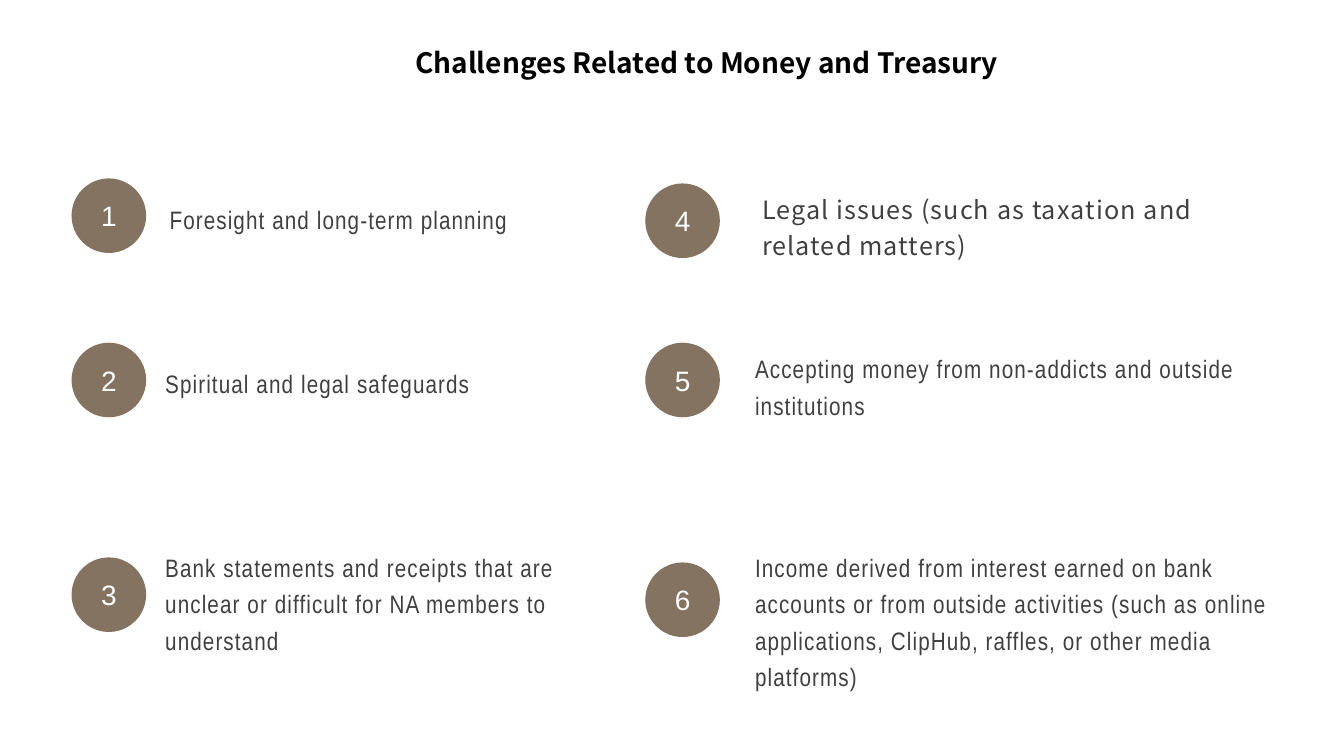
from dataclasses import dataclass

from lxml import etree
from pptx import Presentation
from pptx.dml.color import RGBColor
from pptx.enum.shapes import MSO_SHAPE
from pptx.enum.text import MSO_ANCHOR, MSO_AUTO_SIZE, PP_ALIGN
from pptx.oxml.ns import qn
from pptx.util import Inches, Pt

OVAL = MSO_SHAPE.OVAL
MIDDLE = MSO_ANCHOR.MIDDLE
GROW = MSO_AUTO_SIZE.SHAPE_TO_FIT_TEXT
LEFT, CENTER, RIGHT = PP_ALIGN.LEFT, PP_ALIGN.CENTER, PP_ALIGN.RIGHT


@dataclass(frozen=True)
class Theme:
    heading_font: str = "Noto Sans CJK SC"
    body_font: str = "Arial Narrow"
    digit_font: str = "Arial"
    heading_size: int = 20
    body_size: int = 18
    badge: RGBColor = RGBColor(0x84, 0x73, 0x61)
    badge_text: RGBColor = RGBColor(0xFF, 0xFF, 0xFF)
    body: RGBColor = RGBColor(0x40, 0x40, 0x40)
    title: RGBColor = RGBColor(0x00, 0x00, 0x00)


def write_text(frame, text, *, font, size, color, bold=False, align=LEFT,
               line_spacing=None, tracking=None, complex_font=None):
    """Fill the first paragraph; tracking is in points, complex_font makes it right-to-left."""
    para = frame.paragraphs[0]
    para.alignment = align
    if line_spacing:
        para.line_spacing = line_spacing
    span = para.add_run()
    span.text = text
    span.font.name = font
    span.font.size = Pt(size)
    span.font.bold = bold
    span.font.color.rgb = color
    properties = span.font._element
    if tracking:
        properties.set("spc", str(round(tracking * 100)))
    if complex_font:
        para._p.get_or_add_pPr().set("rtl", "1")
        etree.SubElement(properties, qn("a:cs"), typeface=complex_font)


class SlideBuilder:
    BADGE_SIZE = 0.74

    def __init__(self, page, theme):
        self.page = page
        self.theme = theme

    def text_box(self, text, left, top, width, height, wrap=True, **style):
        box = self.page.shapes.add_textbox(
            Inches(left), Inches(top), Inches(width), Inches(height))
        frame = box.text_frame
        frame.word_wrap = wrap
        frame.auto_size = GROW
        write_text(frame, text, **style)

    def title(self, text, *place):
        theme = self.theme
        self.text_box(text, *place, wrap=False, font=theme.heading_font,
                      size=theme.heading_size, color=theme.title, bold=True)

    def challenge(self, text, *place, font=None, align=LEFT):
        theme = self.theme
        self.text_box(text, *place, font=font or theme.body_font,
                      size=theme.body_size, color=theme.body, align=align,
                      line_spacing=1.2, tracking=0.8)

    def badge(self, number, left, top):
        theme = self.theme
        size = Inches(self.BADGE_SIZE)
        circle = self.page.shapes.add_shape(
            OVAL, Inches(left), Inches(top), size, size)
        circle.shadow.inherit = False
        circle.fill.solid()
        circle.fill.fore_color.rgb = theme.badge
        circle.line.fill.background()
        circle.text_frame.vertical_anchor = MIDDLE
        write_text(circle.text_frame, str(number), font=theme.heading_font,
                   size=theme.heading_size, color=theme.badge_text,
                   align=CENTER, complex_font=theme.digit_font)


BADGE_COLUMNS = (0.71, 6.4)
BADGE_TOPS = ((1.77, 3.4, 5.53), (1.82, 3.4, 5.58))

# Text, place (left, top, width, height), format that differs from the rest
CHALLENGES = (
    ("Foresight and long‑term planning",
     (1.54, 1.92, 3.59, 0.43), {"align": RIGHT}),
    ("Spiritual and legal safeguards", (1.54, 3.54, 3.28, 0.43), {}),
    ("Bank statements and receipts that are unclear or difficult for NA "
     "members to understand", (1.54, 5.37, 4.71, 1.16), {}),
    ("Legal issues (such as taxation and related matters)",
     (7.46, 1.82, 4.74, 0.8), {"font": Theme.heading_font}),
    ("Accepting money from non‑addicts and outside institutions",
     (7.39, 3.4, 5.03, 0.79), {}),
    ("Income derived from interest earned on bank accounts or from outside "
     "activities (such as online applications, ClipHub, raffles, or other "
     "media platforms)", (7.39, 5.37, 5.51, 1.52), {}),
)


def main():
    deck = Presentation()
    deck.slide_width = Inches(13.33)
    deck.slide_height = Inches(7.5)
    builder = SlideBuilder(deck.slides.add_slide(deck.slide_layouts[6]), Theme())

    builder.title("Challenges Related to Money and Treasury", 4.02, 0.4, 6.23, 0.44)
    badge_places = [(left, top) for left, tops in zip(BADGE_COLUMNS, BADGE_TOPS)
                    for top in tops]
    for number, (badge_place, challenge) in enumerate(zip(badge_places, CHALLENGES), 1):
        text, text_place, style = challenge
        builder.badge(number, *badge_place)
        builder.challenge(text, *text_place, **style)

    deck.save("out.pptx")


if __name__ == "__main__":
    main()
